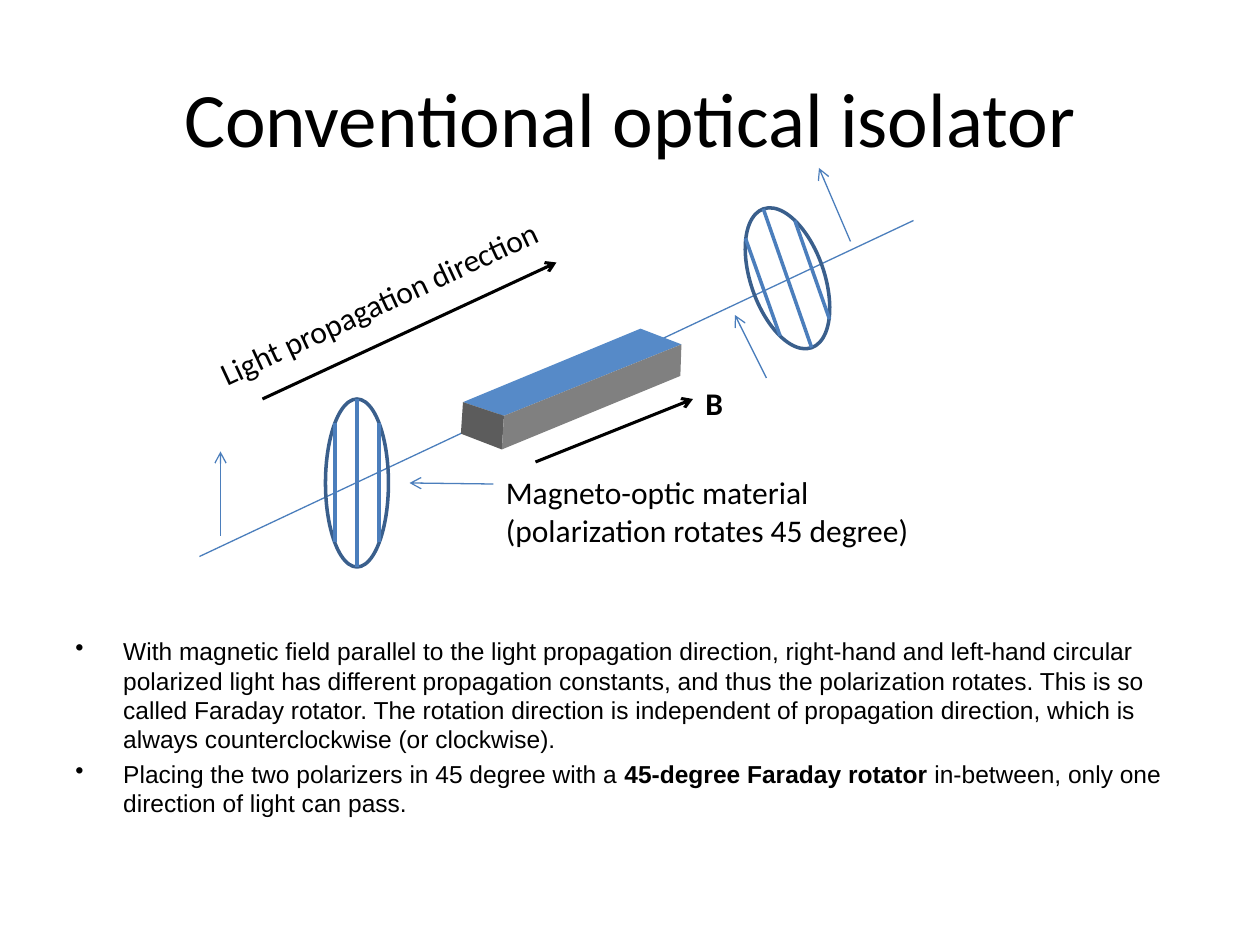
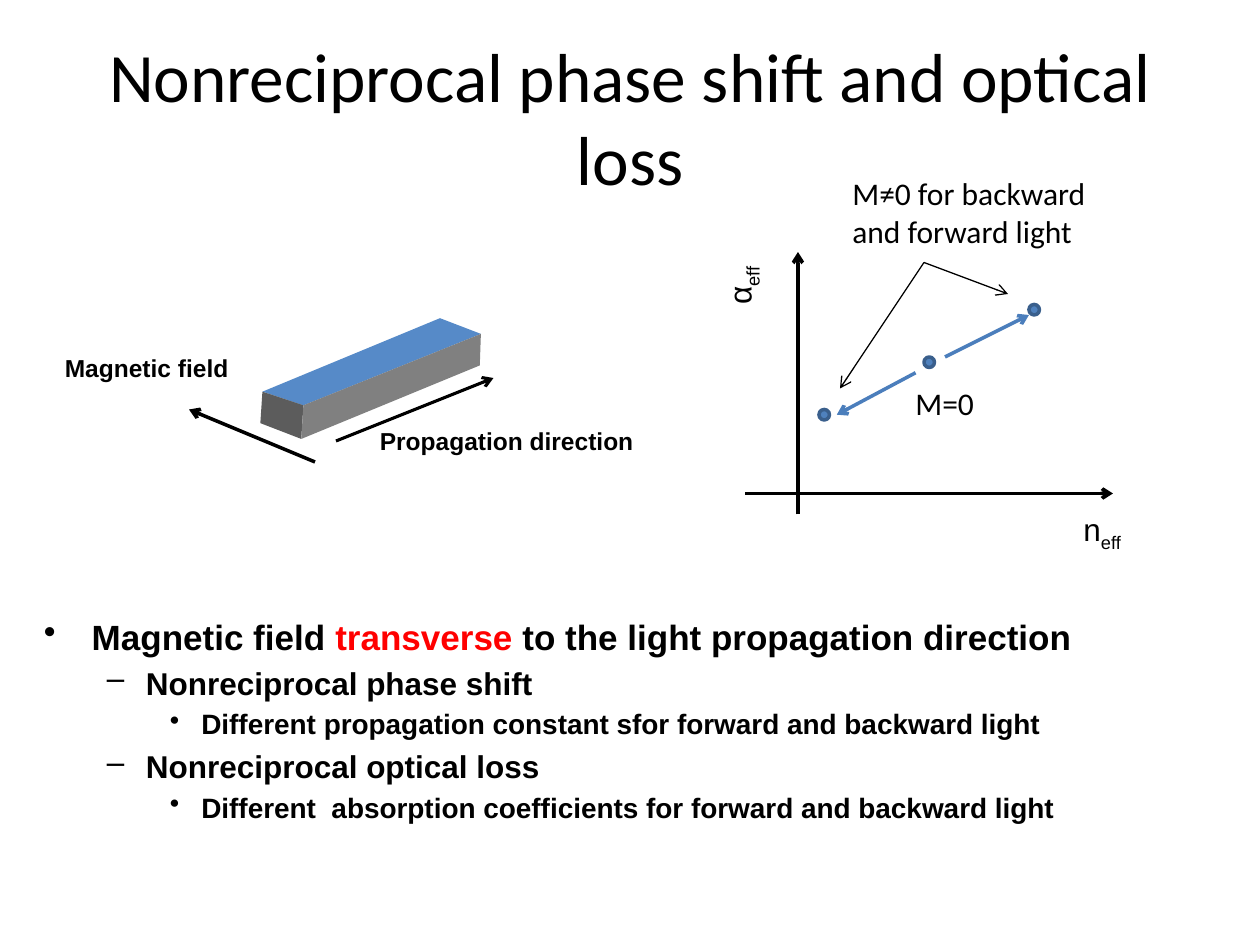
import dataclasses
import itertools
import lxml.etree
import pptx
import pptx.dml.color
import pptx.enum.shapes
import pptx.enum.text
import pptx.oxml.ns
import pptx.util


@dataclasses.dataclass(frozen=True)
class Theme:
    ink: str = "000000"
    blue: str = "4F81BD"
    beam: str = "4B7EBC"
    edge: str = "3A5F8C"
    red: str = "FF0000"
    top: str = "568AC8"
    end: str = "5C5C5C"
    side: str = "808080"
    head: str = "Calibri"
    text: str = "Arial"
    large: float = 44
    title: float = 39.6
    label: float = 18
    small: float = 14
    levels: tuple = (20, 18, 16)
    thin: float = 0.75
    mid: float = 1.75
    bold: float = 2


theme = Theme()
color = pptx.dml.color.RGBColor.from_string
tag = pptx.oxml.ns.qn
deck = pptx.Presentation()
deck.slide_width = pptx.util.Inches(10)
deck.slide_height = pptx.util.Inches(7.5)
cell = deck.slide_width // 120


def line(page, ends, ink, width, arrow=False):
    bar = page.shapes.add_connector(
        pptx.enum.shapes.MSO_CONNECTOR.STRAIGHT, *[round(n * cell) for n in ends])
    bar.line.color.rgb = color(ink)
    bar.line.width = pptx.util.Pt(width)
    props = bar._element.spPr
    if arrow:
        lxml.etree.SubElement(props.find(tag("a:ln")), tag("a:tailEnd"), type="arrow")
    lxml.etree.SubElement(props, tag("a:effectLst"))


def text(page, area, rows, font, size, bold=False, wrap=False, turn=0):
    box = page.shapes.add_textbox(*[round(n * cell) for n in area])
    box.rotation = turn
    frame = box.text_frame
    frame.word_wrap = wrap
    for count, row in enumerate(rows):
        para = frame.add_paragraph() if count else frame.paragraphs[0]
        para.font.name = font
        para.font.size = pptx.util.Pt(size)
        para.font.bold = bold
        para.font.color.rgb = color(theme.ink)
        for part in row:
            words, style = part if isinstance(part, tuple) else (part, "")
            run = para.add_run()
            run.text = words
            if style == "bold":
                run.font.bold = True
            if style == "red":
                run.font.color.rgb = color(theme.red)
            if style == "sub":
                run.font._element.set("baseline", "-25000")
    return frame


pages = []
for words, size in [
    ("Conventional optical isolator", theme.large),
    ("Nonreciprocal phase shift and optical loss", theme.title),
]:
    page = deck.slides.add_slide(deck.slide_layouts[6])
    frame = text(page, (6, 3.6, 108, 15), [[words]], theme.head, size, wrap=True)
    frame.vertical_anchor = pptx.enum.text.MSO_ANCHOR.MIDDLE
    frame.paragraphs[0].alignment = pptx.enum.text.PP_ALIGN.CENTER
    pages.append(page)
first, second = pages

line(first, (19, 53, 87, 21), theme.beam, theme.thin)

near, far, right, front = (44.1, 38.3), (61, 31.3), (64.9, 32.8), (48, 39.6)
base, foot, heel = (43.9, 41.3), (47.8, 42.8), (64.8, 35.8)
faces = [
    (theme.top, (near, far, right, front)),
    (theme.end, (near, front, foot, base)),
    (theme.side, (front, right, heel, foot)),
]
for (page, left, drop), (fill, points) in itertools.product(
    [(first, 0, 0), (second, -19.1, -1)], faces
):
    spots = [(round((x + left) * cell), round((y + drop) * cell)) for x, y in points]
    path = page.shapes.build_freeform(*spots[0], scale=1.0)
    path.add_line_segments(spots[1:], close=True)
    face = path.convert_to_shape()
    face.shadow.inherit = False
    face.fill.solid()
    face.fill.fore_color.rgb = color(fill)
    face.line.fill.background()

for page, area, turn, fill in [
    (first, (31, 38, 6, 16), 0, False),
    (first, (68, 23, 14, 7), 250.9, False),
    (second, (88, 34, 1, 1), 0, True),
    (second, (98, 29, 1, 1), 0, True),
    (second, (78, 39, 1, 1), 0, True),
]:
    oval = page.shapes.add_shape(
        pptx.enum.shapes.MSO_SHAPE.OVAL, *[round(n * cell) for n in area])
    oval.rotation = turn
    oval.shadow.inherit = False
    oval.line.color.rgb = color(theme.edge)
    oval.line.width = pptx.util.Pt(theme.bold)
    if fill:
        oval.fill.solid()
        oval.fill.fore_color.rgb = color(theme.blue)
    else:
        oval.fill.background()

for ends in [
    (34, 38, 34, 54), (31.9, 40.3, 31.9, 51.6), (36.1, 40.3, 36.1, 51.6),
    (74.3, 32, 71, 22.7), (77.3, 33.1, 72.7, 19.9), (79, 30.4, 75.7, 21),
]:
    line(first, ends, theme.beam, theme.bold)

for page, ink, width, group in [
    (first, theme.ink, theme.mid, [(25, 38, 53, 25), (51, 44, 66, 38)]),
    (first, theme.beam, theme.thin, [
        (21, 51, 21, 43), (81, 23, 78, 16), (73, 36, 70, 30), (47, 46.1, 39, 46)]),
    (second, theme.ink, theme.mid, [(32, 42, 47, 36)]),
    (second, theme.ink, theme.bold, [
        (30, 44, 18, 39), (76, 49, 76, 24), (71, 47, 106, 47)]),
    (second, theme.beam, theme.bold, [(90, 34, 98, 30), (87.2, 35.5, 79.7, 39.5)]),
    (second, theme.ink, theme.thin, [(88, 25, 80, 37), (88, 25, 96, 28)]),
]:
    for ends in group:
        line(page, ends, ink, width, arrow=True)

text(first, (47, 44.5, 41.3, 8.5),
     [["Magneto-optic material"], ["(polarization rotates 45 degree)"]],
     theme.head, theme.label)
text(first, (18.4, 26.3, 35.8, 4.8), [["Light propagation direction"]],
     theme.head, theme.label, turn=335.1)
text(first, (66, 36, 4.1, 4.8), [["B"]], theme.head, theme.label, bold=True)
text(second, (35, 40, 26.6, 4.1), [["Propagation direction"]],
     theme.text, theme.small, bold=True)
text(second, (5, 33, 18, 4.1), [["Magnetic field"]], theme.text, theme.small, bold=True)
text(second, (66.8, 24.2, 7.2, 4.8), [["α", ("eff", "sub")]],
     theme.text, theme.label, turn=270)
text(second, (102, 48, 9, 4.8), [["n", ("eff", "sub")]],
     theme.text, theme.label, wrap=True)
text(second, (86, 36, 8, 4.8), [["M=0"]], theme.head, theme.label)
text(second, (80, 16, 26, 8.5), [["M≠0 for backward and forward light"]],
     theme.head, theme.label, wrap=True)

notes = text(first, (6, 60, 108, 20.4), [
    ["With magnetic field parallel to the light propagation direction, right-hand and "
     "left-hand circular polarized light has different propagation constants, and thus "
     "the polarization rotates. This is so called Faraday rotator. The rotation direction "
     "is independent of propagation direction, which is always counterclockwise "
     "(or clockwise)."],
    ["Placing the two polarizers in 45 degree with a ",
     ("45-degree Faraday rotator ", "bold"),
     "in-between, only one direction of light can pass."],
], theme.text, theme.small, wrap=True)
facts = text(second, (3, 58, 107, 32), [
    ["Magnetic field ", ("transverse ", "red"), "to the light propagation direction"],
    ["Nonreciprocal phase shift"],
    ["Different propagation constant sfor forward and backward light"],
    ["Nonreciprocal optical loss"],
    ["Different  absorption coefficients for forward and backward light"],
], theme.text, theme.levels[0], bold=True, wrap=True)

marks = [("•", 0.38, 0.38), ("–", 0.81, 0.31), ("•", 1.25, 0.25)]
for frame, depths, sizes in [
    (notes, (0, 0), (theme.small,)),
    (facts, (0, 1, 2, 1, 2), theme.levels),
]:
    for para, depth in zip(frame.paragraphs, depths):
        mark, left, hang = marks[depth]
        para.level = depth
        para.font.size = pptx.util.Pt(sizes[depth])
        para.space_before = pptx.util.Pt(sizes[depth] * 0.2)
        props = para._p.get_or_add_pPr()
        props.set("marL", str(pptx.util.Inches(left)))
        props.set("indent", str(-pptx.util.Inches(hang)))
        bullet = lxml.etree.Element(tag("a:buChar"), char=mark)
        props.find(tag("a:defRPr")).addprevious(bullet)

deck.save("out.pptx")
